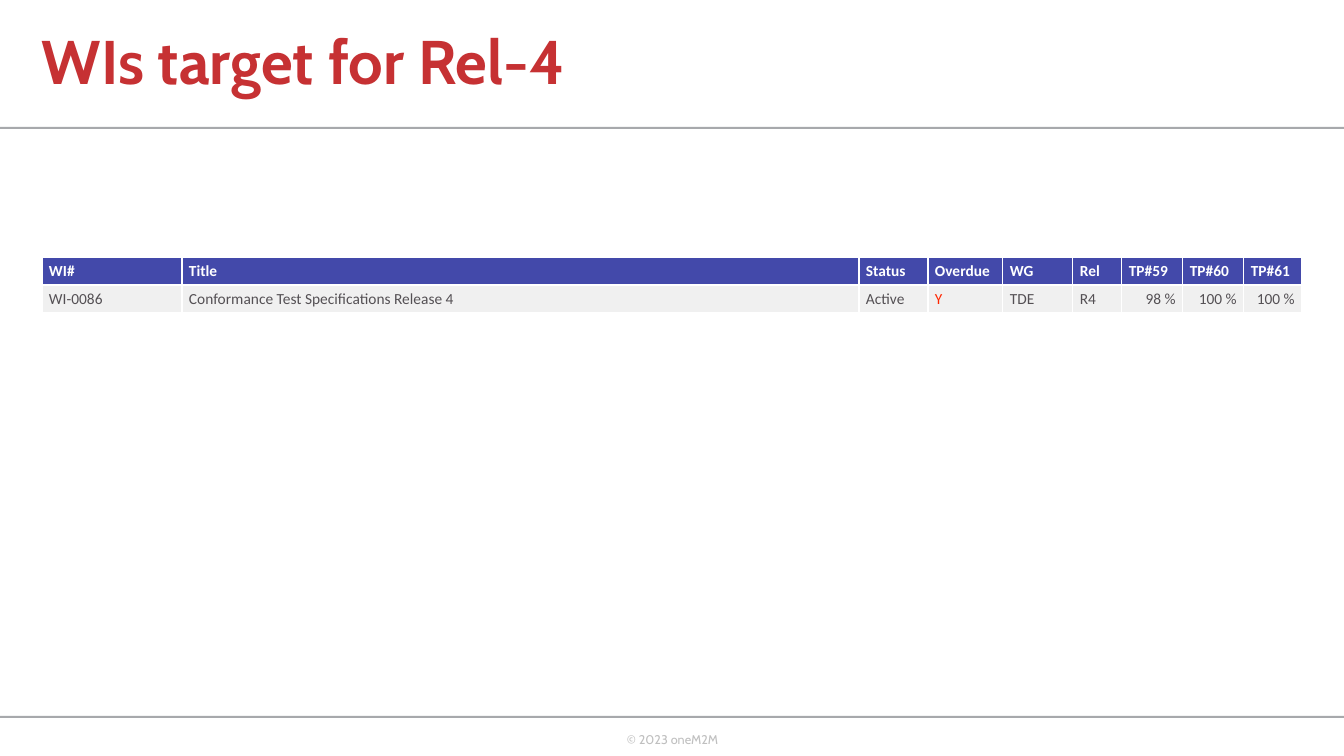
from lxml.etree import SubElement
from pptx import Presentation
from pptx.dml.color import RGBColor
from pptx.enum.shapes import MSO_SHAPE
from pptx.enum.text import MSO_ANCHOR, MSO_AUTO_SIZE, PP_ALIGN
from pptx.oxml.ns import qn
from pptx.util import Pt

TITLE = "WIs target for Rel-4"
FOOTER = "© 2023 oneM2M"
COLUMNS = [
    ("WI#", 140), ("Title", 677), ("Status", 69), ("Overdue", 75), ("WG", 70),
    ("Rel", 49), ("TP#59", 61), ("TP#60", 61), ("TP#61", 58),
]
WORK_ITEMS = [
    ("WI-0086", "Conformance Test Specifications Release 4", "Active", "Y", "TDE",
     "R4", "98 %", "100 %", "100 %"),
]

RED = RGBColor(0xC6, 0x31, 0x33)
ALERT = RGBColor(0xFF, 0x26, 0x00)
BLUE = RGBColor(0x43, 0x49, 0xAA)
WHITE = RGBColor(0xFF, 0xFF, 0xFF)
PALE = RGBColor(0xF0, 0xF0, 0xF0)
TEXT = RGBColor(0x54, 0x50, 0x54)
RULE = RGBColor(0xA7, 0xA9, 0xAC)
FOOTER_GREY = RGBColor(0xBF, 0xBF, 0xBF)

SLIDE_WIDTH, SLIDE_HEIGHT = 1344, 756
RULE_TOPS, RULE_HEIGHT = (127, 716), 2
TITLE_BOX = (37, 0, 866, 129)
FOOTER_BOX = (622, 727, 105, 41)
TABLE_LEFT, TABLE_TOP, ROW_HEIGHT = 42, 257, 28
BOX_MARGIN, CELL_MARGIN = 5, 7
EMU_PER_PX = 914400 / 100.8


def px(length):
    return round(length * EMU_PER_PX)


def set_all(target, values):
    for name, value in values.items():
        setattr(target, name, value)


def write(frame, text, font, color, size, bold=False, **paragraph_format):
    paragraph = frame.paragraphs[0]
    paragraph.text = text
    set_all(paragraph, paragraph_format)
    text_font = paragraph.runs[0].font
    set_all(text_font, {"name": font, "size": Pt(size), "bold": bold})
    text_font.color.rgb = color


def margins(horizontal, vertical):
    return {"margin_left": px(horizontal), "margin_right": px(horizontal),
            "margin_top": px(vertical), "margin_bottom": px(vertical)}


def add_borders(cell):
    properties = cell._tc.get_or_add_tcPr()
    for side in ("lnL", "lnR", "lnT", "lnB"):
        line = SubElement(properties, qn(f"a:{side}"), w=str(Pt(1)))
        SubElement(SubElement(line, qn("a:solidFill")), qn("a:srgbClr"), val=str(WHITE))


def add_rules(slide):
    for top in RULE_TOPS:
        rule = slide.shapes.add_shape(
            MSO_SHAPE.RECTANGLE, 0, px(top), px(SLIDE_WIDTH), px(RULE_HEIGHT))
        rule.shadow.inherit = False
        rule.fill.solid()
        rule.fill.fore_color.rgb = RULE
        rule.line.fill.background()


def add_title(slide):
    title = slide.shapes.title
    set_all(title, dict(zip(("left", "top", "width", "height"), map(px, TITLE_BOX))))
    set_all(title.text_frame, {
        **margins(BOX_MARGIN, BOX_MARGIN), "word_wrap": True,
        "vertical_anchor": MSO_ANCHOR.MIDDLE, "auto_size": MSO_AUTO_SIZE.NONE})
    write(title.text_frame, TITLE, "Cabin", RED, 44, True,
          alignment=PP_ALIGN.LEFT, line_spacing=0.9)


def add_footer(slide):
    frame = slide.shapes.add_textbox(*map(px, FOOTER_BOX)).text_frame
    set_all(frame, {**margins(BOX_MARGIN, BOX_MARGIN), "word_wrap": False,
                    "auto_size": MSO_AUTO_SIZE.SHAPE_TO_FIT_TEXT})
    write(frame, FOOTER, "Cabin", FOOTER_GREY, 9)


def add_work_items(slide):
    headings, widths = zip(*COLUMNS)
    rows = [headings, *WORK_ITEMS]
    table = slide.shapes.add_table(
        len(rows), len(COLUMNS), px(TABLE_LEFT), px(TABLE_TOP),
        px(sum(widths)), px(ROW_HEIGHT * len(rows))).table
    for column, width in zip(table.columns, widths):
        column.width = px(width)
    for row_index, values in enumerate(rows):
        table.rows[row_index].height = px(ROW_HEIGHT)
        header = row_index == 0
        for column_index, value in enumerate(values):
            cell = table.cell(row_index, column_index)
            add_borders(cell)
            cell.fill.solid()
            cell.fill.fore_color.rgb = BLUE if header else PALE
            set_all(cell, {**margins(CELL_MARGIN, 0), "vertical_anchor": MSO_ANCHOR.MIDDLE})
            overdue = headings[column_index] == "Overdue"
            color = WHITE if header else ALERT if overdue else TEXT
            alignment = PP_ALIGN.RIGHT if value.endswith("%") else PP_ALIGN.LEFT
            write(cell.text_frame, value, "Calibri", color, 11, header, alignment=alignment)


def main():
    presentation = Presentation()
    set_all(presentation, {"slide_width": px(SLIDE_WIDTH), "slide_height": px(SLIDE_HEIGHT)})
    slide = presentation.slides.add_slide(presentation.slide_layouts[5])
    add_rules(slide)
    add_footer(slide)
    add_title(slide)
    add_work_items(slide)
    presentation.save("out.pptx")


if __name__ == "__main__":
    main()
